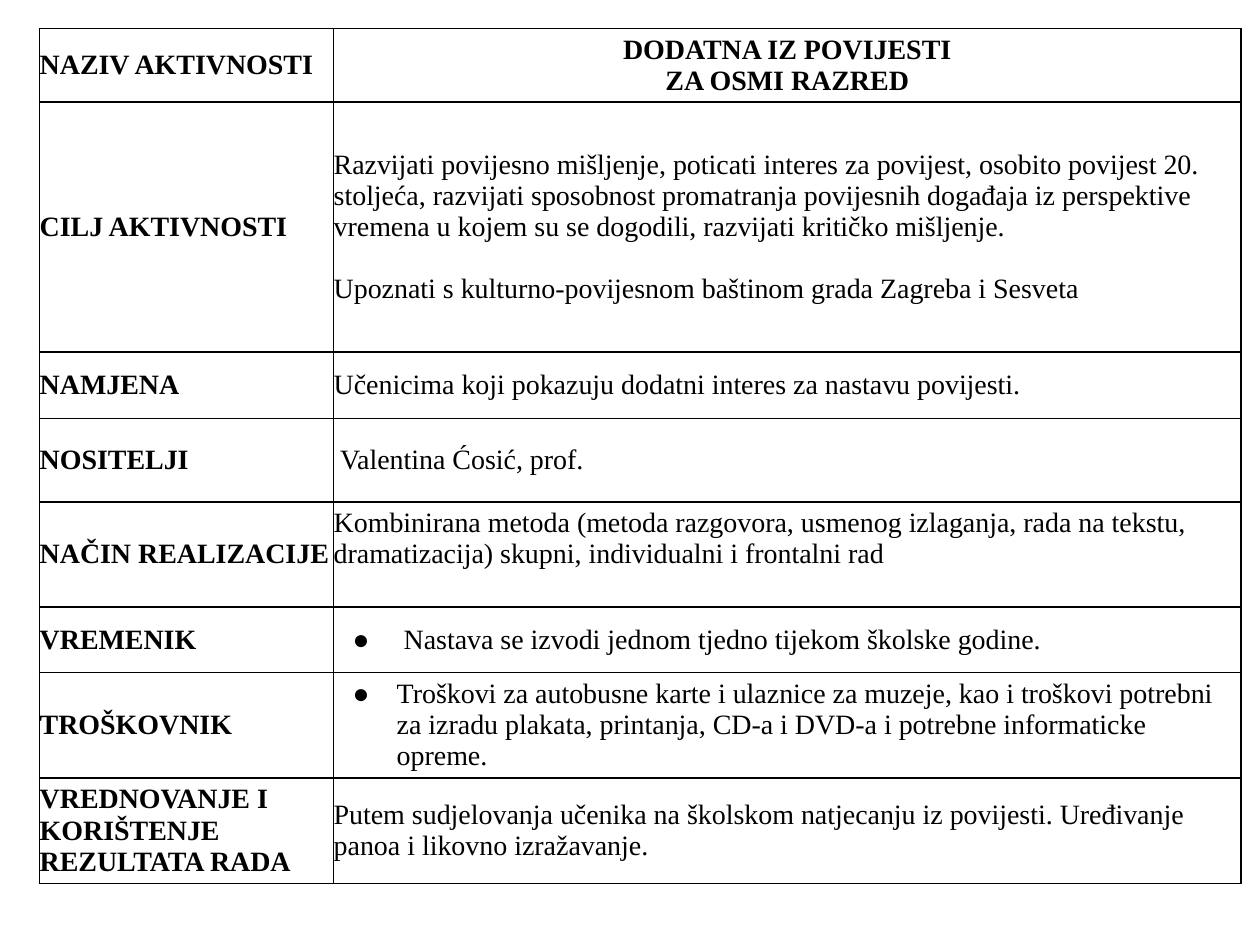
from lxml import etree
from pptx import Presentation
from pptx.dml.color import RGBColor
from pptx.enum.text import MSO_ANCHOR, PP_ALIGN
from pptx.oxml.ns import qn
from pptx.util import Pt

CENTER = PP_ALIGN.CENTER
MIDDLE = MSO_ANCHOR.MIDDLE
FONT = "Times New Roman"
TEXT_SIZE = 16
BLACK = "000000"
BULLET = "●"
COLUMN_WIDTHS = [168, 518.4]

# Row height, label, paragraphs, and the format of the right-hand cell
ACTIVITY_ROWS = [
    (42, "NAZIV AKTIVNOSTI",
     ["DODATNA IZ POVIJESTI", "ZA OSMI RAZRED"],
     {"bold": True, "alignment": CENTER}),
    (143, "CILJ AKTIVNOSTI",
     ["Razvijati povijesno mišljenje, poticati interes za povijest, osobito "
      "povijest 20. stoljeća, razvijati sposobnost promatranja povijesnih "
      "događaja iz perspektive vremena u kojem su se dogodili, razvijati "
      "kritičko mišljenje.",
      "Upoznati s kulturno-povijesnom baštinom grada Zagreba i Sesveta"],
     {"gap": 18}),
    (38, "NAMJENA",
     ["Učenicima koji pokazuju dodatni interes za nastavu povijesti."], {}),
    (47.5, "NOSITELJI", [" Valentina Ćosić, prof."], {}),
    (60.2, "NAČIN REALIZACIJE",
     ["Kombinirana metoda (metoda razgovora, usmenog izlaganja, rada na "
      "tekstu, dramatizacija) skupni, individualni i frontalni rad"],
     {"bottom": 18}),
    (37.5, "VREMENIK",
     [" Nastava se izvodi jednom tjedno tijekom školske godine."],
     {"bulleted": True}),
    (60.2, "TROŠKOVNIK",
     ["Troškovi za autobusne karte i ulaznice za muzeje, kao i troškovi "
      "potrebni za izradu plakata, printanja, CD-a i DVD-a i potrebne "
      "informaticke opreme."],
     {"bulleted": True}),
    (60.2, "VREDNOVANJE I KORIŠTENJE REZULTATA RADA",
     ["Putem sudjelovanja učenika na školskom natjecanju iz povijesti. "
      "Uređivanje panoa i likovno izražavanje."], {}),
]


def color(hex_value):
    return RGBColor.from_string(hex_value)


def set_values(target, values):
    for name, value in values.items():
        setattr(target, name, value)


def add_borders(cell):
    properties = cell._tc.get_or_add_tcPr()
    for side in ("a:lnL", "a:lnR", "a:lnT", "a:lnB"):
        line = etree.SubElement(properties, qn(side), w=str(Pt(1)))
        fill = etree.SubElement(line, qn("a:solidFill"))
        etree.SubElement(fill, qn("a:srgbClr"), val=BLACK)


def add_bullet(paragraph):
    properties = paragraph._p.get_or_add_pPr()
    properties.set("marL", str(Pt(36)))
    properties.set("indent", str(Pt(-25.2)))
    bullet_color = etree.SubElement(properties, qn("a:buClr"))
    etree.SubElement(bullet_color, qn("a:srgbClr"), val=BLACK)
    etree.SubElement(properties, qn("a:buFont"), typeface=FONT)
    etree.SubElement(properties, qn("a:buChar"), char=BULLET)


def fill_cell(cell, texts, bold=False, alignment=None, gap=0, bottom=0,
              bulleted=False):
    add_borders(cell)
    cell.fill.background()
    set_values(cell, {"margin_left": 0, "margin_right": 0, "margin_top": 0,
                      "margin_bottom": Pt(bottom), "vertical_anchor": MIDDLE})
    frame = cell.text_frame
    for index, text in enumerate(texts):
        paragraph = frame.add_paragraph() if index else frame.paragraphs[0]
        paragraph.alignment = alignment
        if index and gap:
            paragraph.space_before = Pt(gap)
        if bulleted:
            add_bullet(paragraph)
        run = paragraph.add_run()
        run.text = text
        set_values(run.font, {"name": FONT, "size": Pt(TEXT_SIZE),
                              "bold": bold})
        run.font.color.rgb = color(BLACK)


def add_activity_table(slide):
    height = sum(row[0] for row in ACTIVITY_ROWS)
    table = slide.shapes.add_table(
        len(ACTIVITY_ROWS), len(COLUMN_WIDTHS), Pt(22.7), Pt(16.3),
        Pt(sum(COLUMN_WIDTHS)), Pt(height)).table
    set_values(table, {"first_row": False, "horz_banding": False})
    for column, width in zip(table.columns, COLUMN_WIDTHS):
        column.width = Pt(width)
    for row, (height, label, texts, style) in zip(table.rows, ACTIVITY_ROWS):
        row.height = Pt(height)
        label_cell, content_cell = row.cells
        fill_cell(label_cell, [label], bold=True)
        fill_cell(content_cell, texts, **style)


def main():
    presentation = Presentation()
    set_values(presentation, {"slide_width": Pt(720), "slide_height": Pt(540)})
    slide = presentation.slides.add_slide(presentation.slide_layouts[6])
    add_activity_table(slide)
    presentation.save("out.pptx")


if __name__ == "__main__":
    main()
